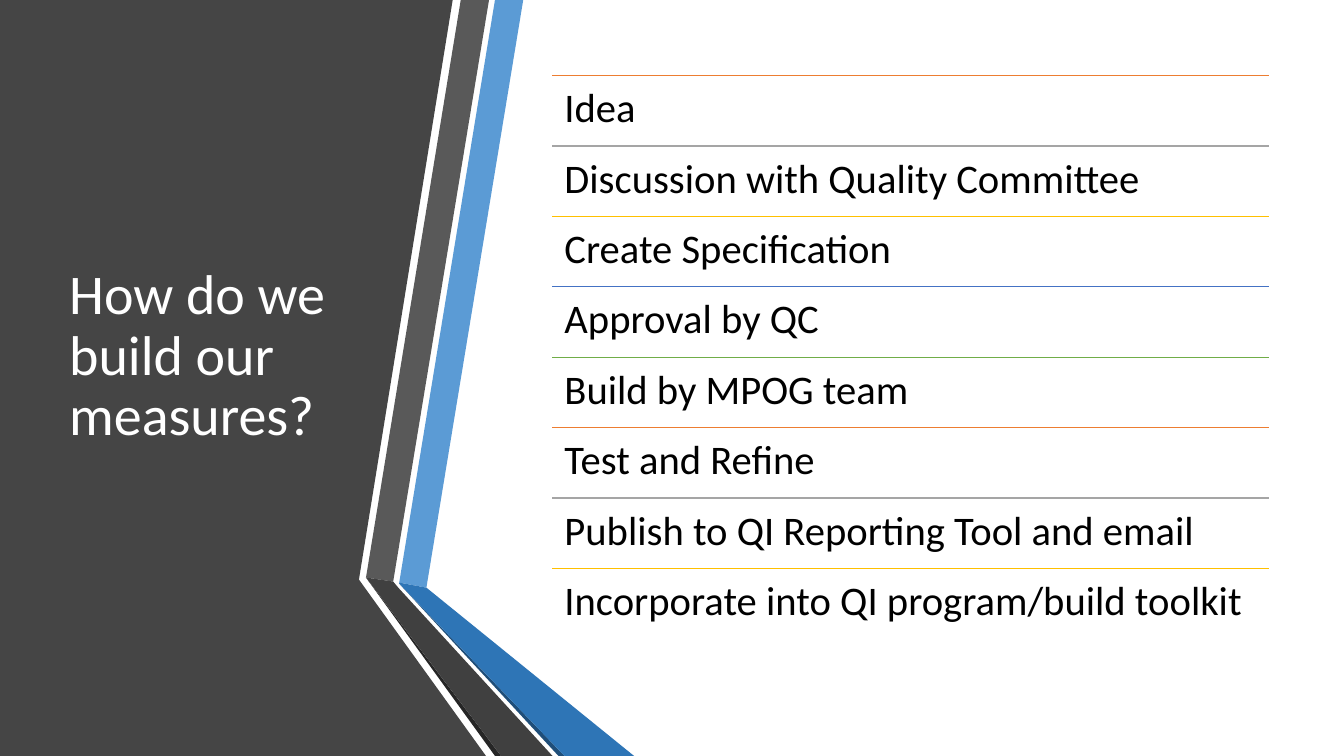
from dataclasses import dataclass
from itertools import cycle

from lxml.etree import SubElement
from pptx import Presentation
from pptx.dml.color import RGBColor
from pptx.enum.shapes import MSO_CONNECTOR
from pptx.enum.text import MSO_ANCHOR, MSO_AUTO_SIZE, PP_ALIGN
from pptx.oxml.ns import qn
from pptx.util import Inches, Pt


@dataclass(frozen=True)
class Theme:
    font: str = "Calibri"
    title_size: int = 40
    step_size: int = 29
    title_color: str = "FFFFFF"
    step_color: str = "000000"
    panel: str = "454545"
    rules: tuple = ("ED7D31", "A5A5A5", "FFC000", "4472C4", "70AD47")


THEME = Theme()
SLIDE_W, SLIDE_H = Inches(13.33), Inches(7.5)

# Content band shared by the title and the steps
BAND_TOP, BAND_H = 0.1 * SLIDE_H, 0.745 * SLIDE_H
TITLE_LEFT, TITLE_W = 0.044 * SLIDE_W, 0.228 * SLIDE_W
STEPS_LEFT, STEPS_W = 0.411 * SLIDE_W, 0.533 * SLIDE_W

STEPS = (
    "Idea",
    "Discussion with Quality Committee",
    "Create Specification",
    "Approval by QC",
    "Build by MPOG team",
    "Test and Refine",
    "Publish to QI Reporting Tool and email",
    "Incorporate into QI program/build toolkit",
)

# Outline corners in inches, from back to front
PANEL = ((0, 0), (4.49, 0), (3.56, 5.75), (4.82, 7.5), (0, 7.5))
RIBBONS = (
    ("5B9BD5", ((3.96, 5.78), (4.23, 5.83), (5.19, 0), (4.91, 0))),
    ("595959", ((4.85, 0), (4.57, 0), (3.63, 5.73), (3.9, 5.77))),
    ("262626", ((3.63, 5.73), (4.91, 7.5), (4.97, 7.5))),
    ("1F4E79", ((3.96, 5.79), (5.54, 7.5), (5.6, 7.5))),
    ("2E75B6", ((3.96, 5.79), (5.6, 7.5), (6.29, 7.5), (4.23, 5.83), (3.96, 5.78))),
    ("404040", ((5.48, 7.5), (3.95, 5.83), (3.9, 5.77), (3.63, 5.73), (4.97, 7.5))),
)


def apply(target, formats):
    for attribute, value in formats.items():
        setattr(target, attribute, value)


def write(shape, text, size, color, frame_formats):
    frame = shape.text_frame
    frame.text = text
    apply(frame, {"word_wrap": True, "auto_size": MSO_AUTO_SIZE.NONE, **frame_formats})
    paragraph = frame.paragraphs[0]
    apply(paragraph, {"alignment": PP_ALIGN.LEFT, "line_spacing": 0.9,
                      "space_before": Pt(0)})
    apply(paragraph.font, {"name": THEME.font, "size": Pt(size)})
    paragraph.font.color.rgb = RGBColor.from_string(color)


def add_facet(slide, color, corners):
    start, *others = [(Inches(x), Inches(y)) for x, y in corners]
    builder = slide.shapes.build_freeform(*start)
    builder.add_line_segments(others, close=True)
    facet = builder.convert_to_shape()
    facet.shadow.inherit = False
    facet.fill.solid()
    facet.fill.fore_color.rgb = RGBColor.from_string(color)
    facet.line.fill.background()


def add_title(slide, text):
    title = slide.shapes.title
    apply(title, {"left": int(TITLE_LEFT), "top": int(BAND_TOP),
                  "width": int(TITLE_W), "height": int(BAND_H)})
    write(title, text, THEME.title_size, THEME.title_color,
          {"vertical_anchor": MSO_ANCHOR.MIDDLE})
    # Bring the title in front of the dark panel
    title.element.getparent().append(title.element)


def add_rule(slide, top, color):
    rule = slide.shapes.add_connector(
        MSO_CONNECTOR.STRAIGHT, int(STEPS_LEFT), top, int(STEPS_LEFT + STEPS_W), top)
    rule.line.width = Pt(1)
    rule.line.color.rgb = RGBColor.from_string(color)
    SubElement(rule.element.spPr, qn("a:effectLst"))


def add_step(slide, top, height, text):
    step = slide.shapes.add_textbox(int(STEPS_LEFT), top, int(STEPS_W), height)
    sides = ("left", "top", "right", "bottom")
    write(step, text, THEME.step_size, THEME.step_color,
          {f"margin_{side}": Inches(0.12) for side in sides})


def add_steps(slide):
    row_height = int(BAND_H / len(STEPS))
    for row, (text, color) in enumerate(zip(STEPS, cycle(THEME.rules))):
        top = int(BAND_TOP) + row * row_height
        add_rule(slide, top, color)
        add_step(slide, top, row_height, text)


def main():
    deck = Presentation()
    apply(deck, {"slide_width": SLIDE_W, "slide_height": SLIDE_H})
    slide = deck.slides.add_slide(deck.slide_layouts[5])

    # Dark panel and folded ribbons
    for color, corners in ((THEME.panel, PANEL), *RIBBONS):
        add_facet(slide, color, corners)

    # Question and the steps that answer it
    add_title(slide, "How do we build our measures?")
    add_steps(slide)

    deck.save("out.pptx")


if __name__ == "__main__":
    main()
